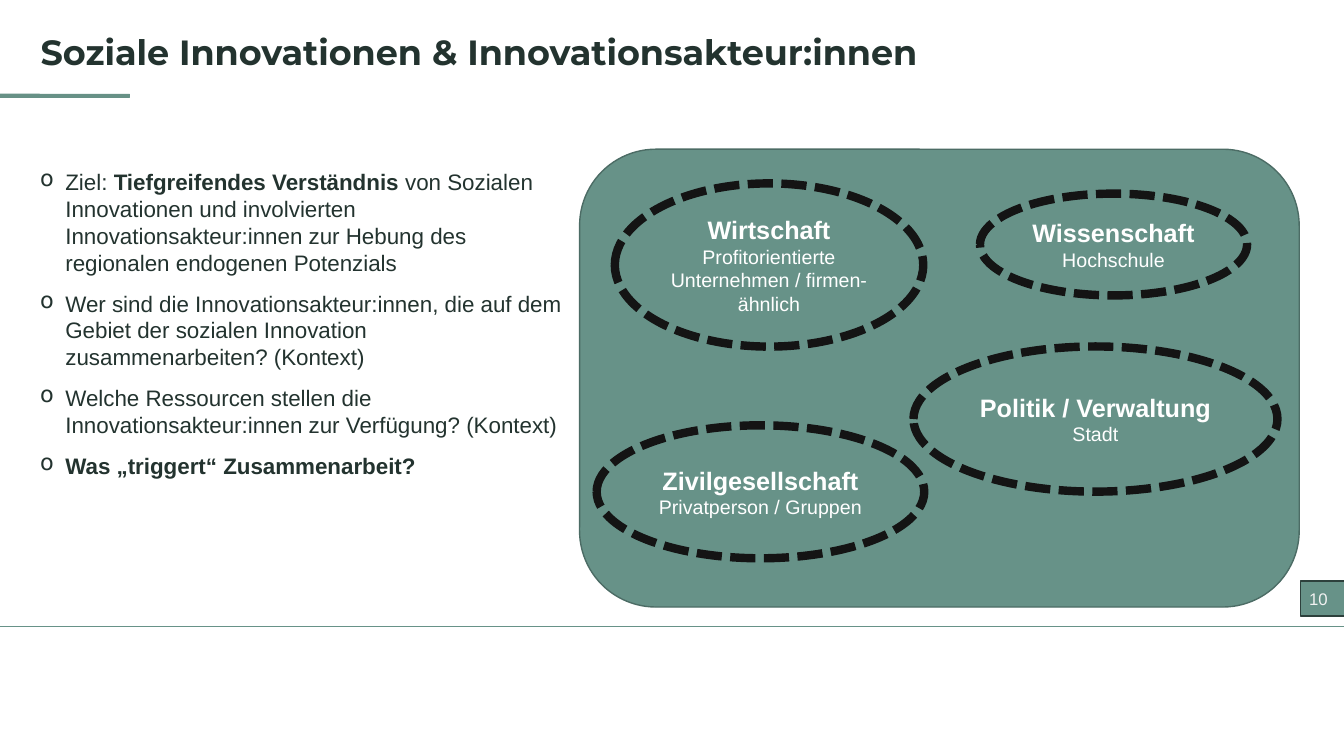
import pptx
import pptx.util
import pptx.dml.color
import pptx.enum.dml
import pptx.enum.shapes
import pptx.enum.text
from dataclasses import dataclass
from lxml import etree

Pt = pptx.util.Pt
RGB = pptx.dml.color.RGBColor.from_string
SHAPE = pptx.enum.shapes.MSO_SHAPE
ALIGN = pptx.enum.text.PP_ALIGN


@dataclass(frozen=True)
class Theme:
    green: str = "679288"
    accent: str = "679186"
    edge: str = "4C6C65"
    badge_edge: str = "2D403C"
    ink: str = "23332F"
    dash: str = "141414"
    white: str = "FFFFFF"
    number: str = "F2F2F2"
    heading_font: str = "Montserrat"
    body_font: str = "Arial"
    title_size: float = 25
    actor_size: float = 18
    body_size: float = 16
    detail_size: float = 14
    number_size: float = 12


theme = Theme()


def add_block(kind, box, fill, edge=None, width=1):
    sp = s.shapes.add_shape(kind, *map(Pt, box))
    sp.shadow.inherit = False
    sp.fill.solid()
    sp.fill.fore_color.rgb = RGB(fill)
    if edge:
        sp.line.color.rgb = RGB(edge)
        sp.line.width = Pt(width)
    else:
        sp.line.fill.background()
    return sp


def style(r, size, color, bold=False, font=theme.body_font):
    r.font.name = font
    r.font.size = Pt(size)
    r.font.bold = bold
    r.font.color.rgb = RGB(color)


prs = pptx.Presentation()
prs.slide_width, prs.slide_height = Pt(960), Pt(540)
s = prs.slides.add_slide(prs.slide_layouts[6])

footer = s.shapes.add_connector(
    pptx.enum.shapes.MSO_CONNECTOR.STRAIGHT, Pt(-6), Pt(447.6), Pt(967.5), Pt(447.6)
)
footer.line.color.rgb = RGB(theme.green)
footer.line.width = Pt(0.75)
ns = "{http://schemas.openxmlformats.org/drawingml/2006/main}"
etree.SubElement(footer._element.spPr, ns + "effectLst")

add_block(SHAPE.ROUNDED_RECTANGLE, (-7.2, 67, 100, 3), theme.accent)
add_block(SHAPE.RECTANGLE, (928.8, 415, 37.5, 25), theme.green, theme.badge_edge)

number = s.shapes.add_textbox(Pt(928), Pt(417), Pt(46), Pt(22))
tf = number.text_frame
tf.word_wrap = True
tf.text = "10"
style(tf.paragraphs[0].runs[0], theme.number_size, theme.number)

title = s.shapes.add_textbox(Pt(22), Pt(22), Pt(690), Pt(37.5))
tf = title.text_frame
tf.word_wrap = True
tf.text = "Soziale Innovationen & Innovationsakteur:innen"
tf.paragraphs[0].line_spacing = 0.9
style(tf.paragraphs[0].runs[0], theme.title_size, theme.ink, True, theme.heading_font)

questions = [
    [
        ("Ziel: ", False),
        ("Tiefgreifendes Verständnis", True),
        (" von Sozialen Innovationen und involvierten Innovationsakteur:innen "
         "zur Hebung des regionalen endogenen Potenzials", False),
    ],
    [("Wer sind die Innovationsakteur:innen, die auf dem Gebiet der sozialen "
      "Innovation zusammenarbeiten? (Kontext)", False)],
    [("Welche Ressourcen stellen die Innovationsakteur:innen zur Verfügung? "
      "(Kontext)", False)],
    [("Was „triggert“ Zusammenarbeit?", True)],
]
body = s.shapes.add_textbox(Pt(21.6), Pt(116.6), Pt(389), Pt(313))
tf = body.text_frame
tf.word_wrap = True
for i, parts in enumerate(questions):
    p = tf.add_paragraph() if i else tf.paragraphs[0]
    pPr = p._p.get_or_add_pPr()
    pPr.set("marL", str(Pt(18)))
    pPr.set("indent", str(-Pt(18)))
    color = etree.SubElement(pPr, ns + "buClr")
    etree.SubElement(color, ns + "srgbClr", val=theme.ink)
    etree.SubElement(pPr, ns + "buChar", char="o")
    if i:
        p.space_before = Pt(10)
    for text, bold in parts:
        r = p.add_run()
        r.text = text
        style(r, theme.body_size, theme.ink, bold)

add_block(SHAPE.ROUNDED_RECTANGLE, (414, 106.6, 514, 327), theme.green, theme.edge)

actors = [
    ("Wirtschaft", "Profitorientierte Unternehmen / firmen-ähnlich",
     (439.2, 131, 220.3, 116.6)),
    ("Wissenschaft", "Hochschule", (700, 138.3, 190.8, 72.7)),
    ("Zivilgesellschaft", "Privatperson / Gruppen", (426.2, 303.8, 234, 95)),
    ("Politik / Verwaltung", "Stadt", (652.5, 247.5, 260, 103.7)),
]
for name, detail, box in actors:
    sp = add_block(SHAPE.OVAL, box, theme.green, theme.dash, 6)
    sp.line.dash_style = pptx.enum.dml.MSO_LINE.SQUARE_DOT
    tf = sp.text_frame
    tf.word_wrap = True
    tf.vertical_anchor = pptx.enum.text.MSO_ANCHOR.MIDDLE
    tf.text = name + "\n" + detail
    for p, size, bold in zip(
        tf.paragraphs, (theme.actor_size, theme.detail_size), (True, False)
    ):
        p.alignment = ALIGN.CENTER
        style(p.runs[0], size, theme.white, bold)

prs.save("out.pptx")
